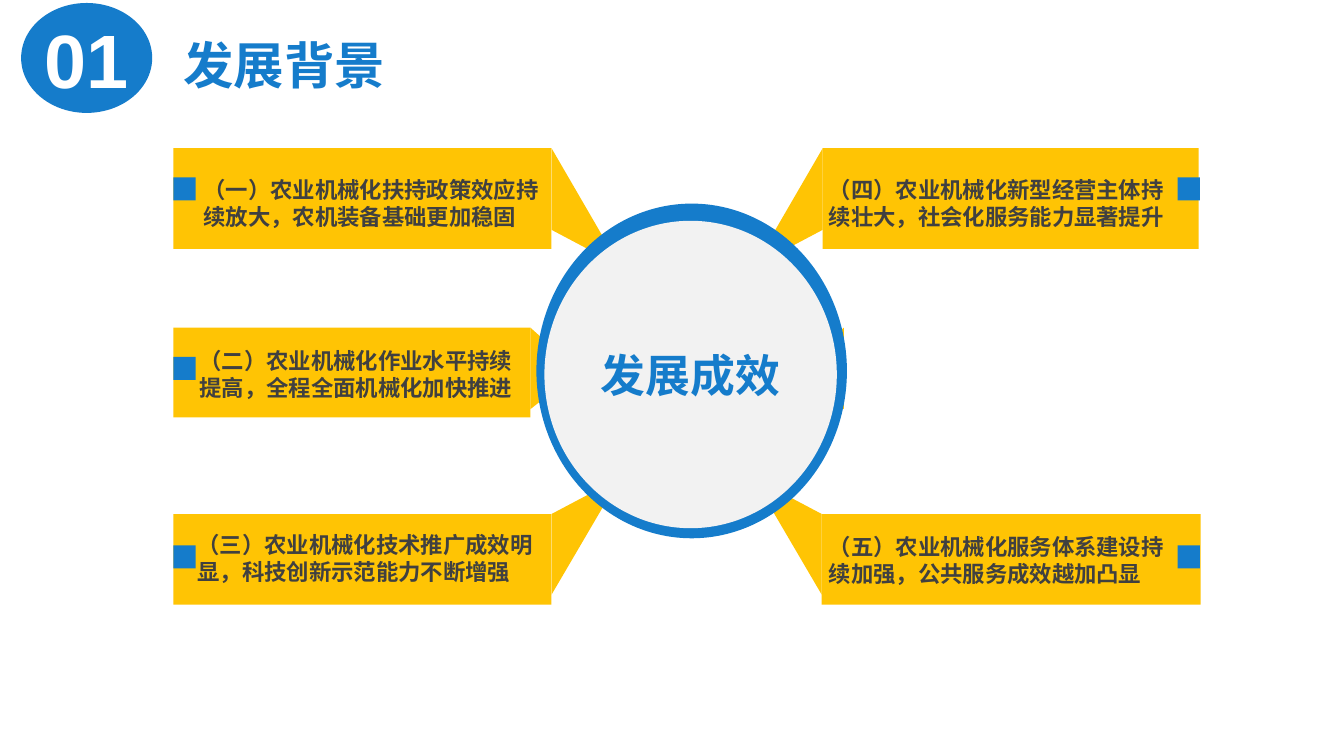
from lxml import etree
from pptx import Presentation
from pptx.dml.color import RGBColor
from pptx.enum.shapes import MSO_SHAPE
from pptx.enum.text import MSO_ANCHOR, MSO_AUTO_SIZE, PP_ALIGN
from pptx.oxml.ns import qn
from pptx.util import Inches, Pt

OVAL, RECTANGLE = MSO_SHAPE.OVAL, MSO_SHAPE.RECTANGLE
TOP, MIDDLE = MSO_ANCHOR.TOP, MSO_ANCHOR.MIDDLE
LEFT, CENTER = PP_ALIGN.LEFT, PP_ALIGN.CENTER
NO_AUTO_SIZE = MSO_AUTO_SIZE.NONE

BLUE, YELLOW, GREY, WHITE, DARK = "157CCB", "FFC404", "F2F2F2", "FFFFFF", "404040"
CHINESE_FONT = "Noto Sans CJK SC"

UPPER_WEDGE = [(0, 1.47), (0.58, 2.47), (0.51, 2.55), (0, 2.28)]
MIDDLE_WEDGE = [(0, 3.25), (0.39, 3.6), (0.39, 3.75), (0, 4.06)]
LOWER_WEDGE = [(0, 5.9), (0.58, 4.91), (0.51, 4.83), (0, 5.1)]

CALLOUTS = [
    ("（一）农业机械化扶持政策效应持续放大，农机装备基础更加稳固",
     (1.72, 1.47, 3.75, 1), (2.02, 1.7, 3.45), 1.76, UPPER_WEDGE, 1),
    ("（二）农业机械化作业水平持续提高，全程全面机械化加快推进",
     (1.72, 3.25, 3.54, 0.89), (1.98, 3.39, 3.3), 3.54, MIDDLE_WEDGE, 1),
    ("（三）农业机械化技术推广成效明显，科技创新示范能力不断增强",
     (1.72, 5.1, 3.75, 0.9), (1.96, 5.22, 3.51), 5.41, LOWER_WEDGE, 1),
    ("（四）农业机械化新型经营主体持续壮大，社会化服务能力显著提升",
     (8.16, 1.47, 3.73, 1), (8.22, 1.7, 3.45), 1.76, UPPER_WEDGE, -1),
    ("（五）农业机械化服务体系建设持续加强，公共服务成效越加凸显",
     (8.15, 5.1, 3.76, 0.9), (8.22, 5.24, 3.45), 5.41, LOWER_WEDGE, -1),
]


def color(value):
    return RGBColor.from_string(value)


def paint(shape, fill):
    shape.shadow.inherit = False
    shape.fill.solid()
    shape.fill.fore_color.rgb = color(fill)
    shape.line.fill.background()


def add_filled(slide, kind, box, fill):
    shape = slide.shapes.add_shape(kind, *map(Inches, box))
    paint(shape, fill)
    return shape


def write(shape, text, size, text_color, font=CHINESE_FONT, align=LEFT,
          anchor=TOP, side_margin=0.1, wrap=True):
    frame = shape.text_frame
    frame.text = text
    frame.word_wrap = wrap
    frame.auto_size = NO_AUTO_SIZE
    frame.vertical_anchor = anchor
    frame.margin_left = frame.margin_right = Inches(side_margin)
    frame.margin_top = frame.margin_bottom = Inches(0.05)
    paragraph = frame.paragraphs[0]
    paragraph.alignment = align
    run = paragraph.runs[0]
    run.font.size = Pt(size)
    run.font.bold = True
    run.font.name = font
    run.font.color.rgb = color(text_color)
    east_asian = etree.SubElement(run.font._element, qn("a:ea"))
    east_asian.set("typeface", font)
    return paragraph


def add_wedge(slide, edge, direction, outline):
    points = [(Inches(edge + direction * offset), Inches(y)) for offset, y in outline]
    builder = slide.shapes.build_freeform(*points[0])
    builder.add_line_segments(points[1:], close=True)
    paint(builder.convert_to_shape(), YELLOW)


def add_header(slide, box):
    left, top, width, height = box
    badge = add_filled(slide, OVAL, (left, top, 1.3, height), BLUE)
    write(badge, "01", 54, WHITE, "Arial", CENTER, MIDDLE, wrap=False)
    title = slide.shapes.title
    title.left, title.top = Inches(left + 1.51), Inches(top + 0.26)
    title.width, title.height = Inches(width - 1.51), Inches(0.71)
    write(title, "发展背景", 36, BLUE)


def add_callout(slide, text, box, text_box, marker_top, outline, direction):
    left, top, width, height = box
    add_filled(slide, RECTANGLE, box, YELLOW)
    edge = left + width if direction > 0 else left
    add_wedge(slide, edge, direction, outline)
    marker_left = 1.72 if direction > 0 else 11.68
    add_filled(slide, RECTANGLE, (marker_left, marker_top, 0.22, 0.23), BLUE)
    label = slide.shapes.add_textbox(*map(Inches, (*text_box, 0.66)))
    paragraph = write(label, text, 16, DARK, side_margin=0)
    paragraph.line_spacing = Pt(19.3)


def add_hub(slide, box):
    left, top, width, height = box
    add_filled(slide, OVAL, box, BLUE)
    center = add_filled(slide, OVAL, (left + 0.08, top + 0.17, 2.9, 3.05), GREY)
    write(center, "发展成效", 32, BLUE, align=CENTER, anchor=MIDDLE, wrap=False)


def main():
    presentation = Presentation()
    presentation.slide_width = Inches(13.33)
    presentation.slide_height = Inches(7.5)
    slide = presentation.slides.add_slide(presentation.slide_layouts[5])
    add_header(slide, (0.21, 0.03, 5.39, 1.09))
    add_wedge(slide, 8.37, -1, MIDDLE_WEDGE)
    for callout in CALLOUTS:
        add_callout(slide, *callout)
    add_hub(slide, (5.32, 2.02, 3.08, 3.32))
    presentation.save("out.pptx")


if __name__ == "__main__":
    main()
